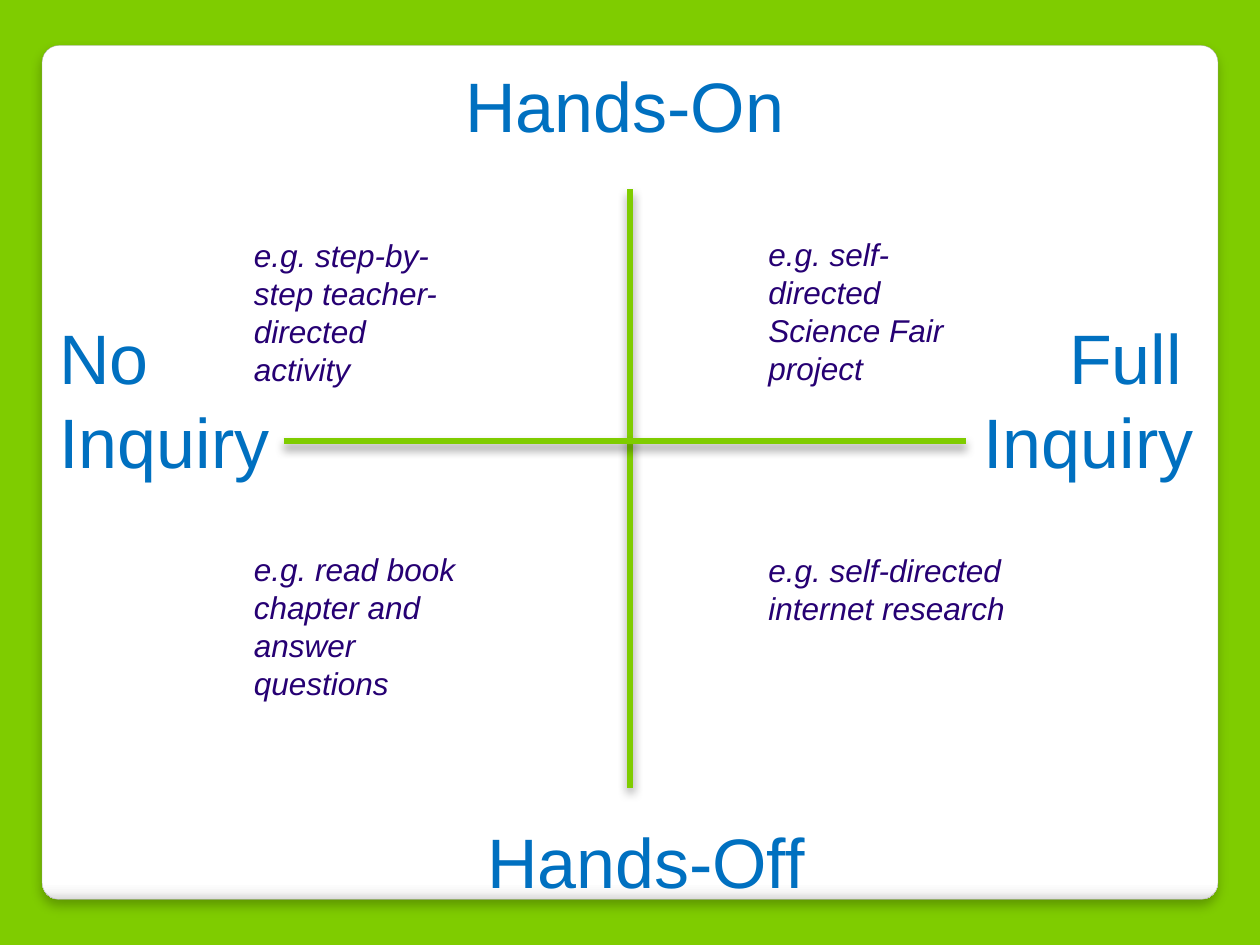
from lxml import etree
from pptx import Presentation
from pptx.dml.color import RGBColor
from pptx.enum import shapes, text
from pptx.oxml import parse_xml
from pptx.oxml.ns import nsdecls, qn
from pptx.util import Pt

GREEN, BLUE, VIOLET, WHITE = "7FCC00", "0070C0", "260073", "FFFFFF"
ROW = 48
LEFT, CENTER = text.PP_ALIGN.LEFT, text.PP_ALIGN.CENTER


def color(value):
    """Turn a hex string into a colour."""
    return RGBColor.from_string(value)


def add_shadow(shape, opacity, blur, distance):
    """Cast a black shadow straight down."""
    properties = shape._element.spPr
    for old in properties.findall(qn("a:effectLst")):
        properties.remove(old)
    properties.append(parse_xml(
        f'<a:effectLst {nsdecls("a")}><a:outerShdw blurRad="{Pt(blur)}" '
        f'dist="{Pt(distance)}" dir="5400000" algn="ctr" rotWithShape="0">'
        f'<a:srgbClr val="000000"><a:alpha val="{opacity * 1000}"/></a:srgbClr>'
        '</a:outerShdw></a:effectLst>'))


def shade_downward(shape, stops):
    """Fill a shape from top to bottom with the given stops."""
    shape.fill.gradient()
    shape.fill.gradient_angle = 270
    stop_list = shape._element.spPr.find(qn("a:gradFill")).find(qn("a:gsLst"))
    for old in list(stop_list):
        stop_list.remove(old)
    for position, shade in stops:
        stop = etree.SubElement(stop_list, qn("a:gs"), pos=str(position * 1000))
        etree.SubElement(stop, qn("a:srgbClr"), val=shade)


def add_panel(slide, left, top, width, height):
    """Draw the rounded panel with its plain white inner face."""
    faces = []
    for box in ((left, top, width, height),
                (left + 9, top + 8, width - 18, height - 82)):
        face = slide.shapes.add_shape(
            shapes.MSO_SHAPE.ROUNDED_RECTANGLE, *map(Pt, box))
        face.adjustments[0] = 0.02
        face.shadow.inherit = False
        faces.append(face)
    panel, inner = faces
    shade_downward(panel, ((0, WHITE), (98, WHITE), (99, "F7F7F7"), (100, "DADADA")))
    panel.line.color.rgb = color("A4A4A4")
    panel.line.width = Pt(0.16)
    add_shadow(panel, 25, 6, 4)
    inner.fill.solid()
    inner.fill.fore_color.rgb = color(WHITE)
    inner.line.fill.background()


def add_words(slide, box, lines, font, spacing, align=LEFT, inset=(0, 0)):
    """Write (indent, words) lines into a box."""
    frame = slide.shapes.add_textbox(*map(Pt, box)).text_frame
    frame.word_wrap = True
    frame.margin_left = frame.margin_right = Pt(inset[0])
    frame.margin_top = frame.margin_bottom = Pt(inset[1])
    for number, (indent, words) in enumerate(lines):
        paragraph = frame.add_paragraph() if number else frame.paragraphs[0]
        paragraph.alignment = align
        paragraph.line_spacing = Pt(spacing)
        if indent:
            paragraph._p.get_or_add_pPr().set("marL", str(Pt(indent)))
        run = paragraph.add_run()
        run.text = words
        run.font.color.rgb = color(font["shade"])
        for name, value in font["format"].items():
            setattr(run.font, name, value)


def add_poles(slide, left, top):
    """Name the four ends of the axes on a grid of text rows."""
    font = {"shade": BLUE, "format": {"name": "Arial", "size": Pt(40)}}
    poles = (
        (227, 0, 200, CENTER, ((0, "Hands-On"),)),
        (4, 3, 130, LEFT, ((0, "No"), (0, "Inquiry"))),
        (532, 3, 130, LEFT, ((49, "Full"), (0, "Inquiry"))),
        (239, 9, 200, CENTER, ((0, "Hands-Off"),)),
    )
    for x, row, width, align, lines in poles:
        box = (left + x, top + row * ROW, width, len(lines) * ROW)
        add_words(slide, box, lines, font, ROW, align)


def add_axes(slide, left, top, width, height):
    """Cross a vertical and a horizontal line inside the box."""
    middle_x, middle_y = left + 198, top + 144
    for ends in ((middle_x, top, middle_x, top + height),
                 (left, middle_y, left + width, middle_y)):
        axis = slide.shapes.add_connector(
            shapes.MSO_CONNECTOR.STRAIGHT, *map(Pt, ends))
        axis.line.color.rgb = color(GREEN)
        axis.line.width = Pt(3.35)
        add_shadow(axis, 40, 5.2, 3)


def add_examples(slide, left, top):
    """Place one example in each quadrant."""
    font = {"shade": VIOLET,
            "format": {"name": "Arial", "size": Pt(18), "italic": True}}
    examples = (
        (0, 0, 138, 73, "e.g. step-by-step teacher-directed activity"),
        (294, -0.5, 138, 73, "e.g. self-directed Science Fair project"),
        (0, 179.5, 144, 73, "e.g. read book chapter and answer questions"),
        (294, 180, 152, 51, "e.g. self-directed internet research"),
    )
    for x, y, width, height, words in examples:
        add_words(slide, (left + x, top + y, width, height), ((0, words),),
                  font, 21.6, inset=(7.2, 3.6))


def main():
    """Build and save the slide."""
    deck = Presentation()
    deck.slide_width, deck.slide_height = Pt(720), Pt(540)
    slide = deck.slides.add_slide(deck.slide_layouts[6])
    slide.background.fill.solid()
    slide.background.fill.fore_color.rgb = color(GREEN)
    add_panel(slide, 24, 26, 672, 488)
    add_poles(slide, 30, 36)
    add_axes(slide, 162, 108, 390, 342)
    add_examples(slide, 138, 131.5)
    deck.save("out.pptx")


if __name__ == "__main__":
    main()
